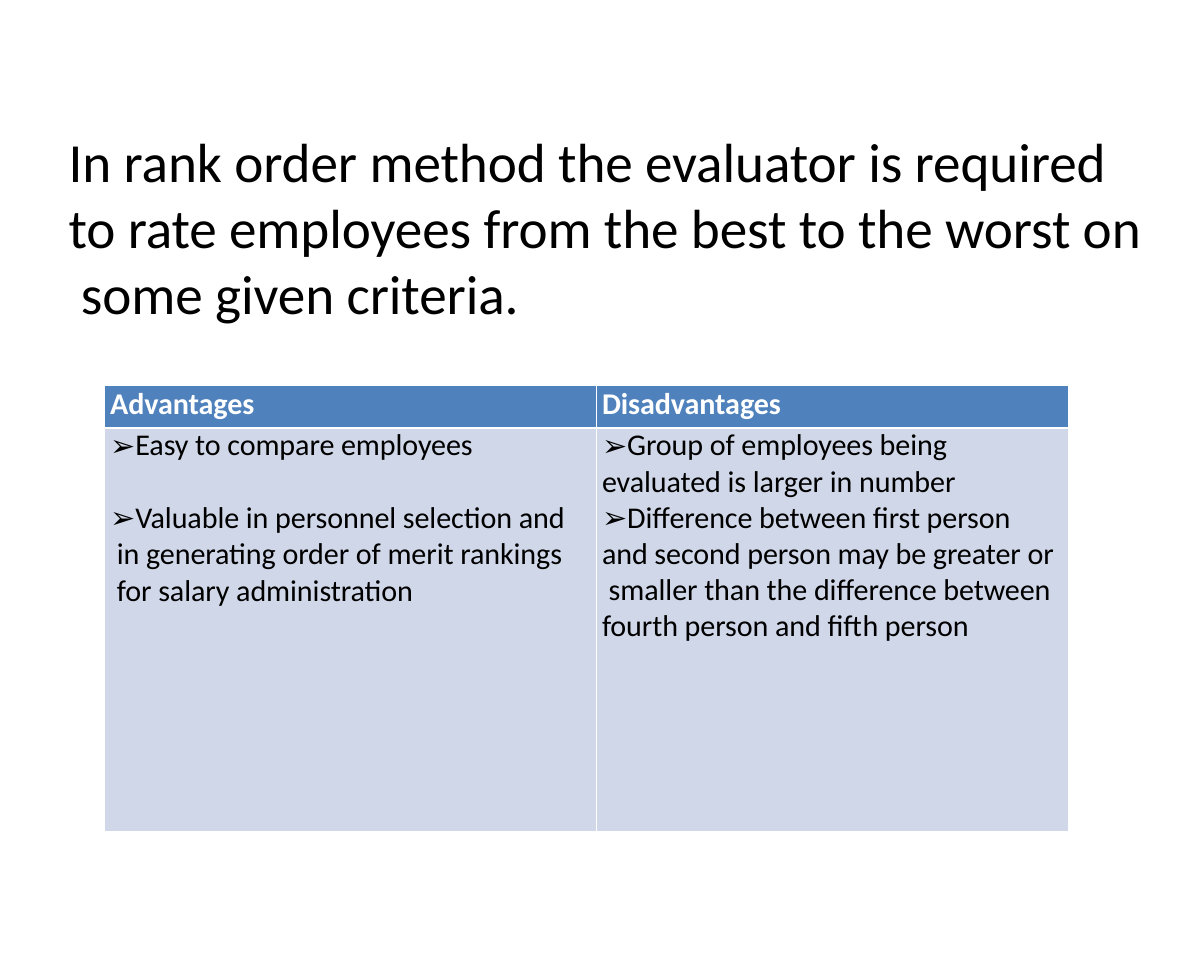
"""Build the slide on the rank order method of employee evaluation."""
from lxml import etree
from pptx import Presentation
from pptx.dml.color import RGBColor
from pptx.enum import text
from pptx.oxml import ns
from pptx.util import Inches, Pt

TITLE = (
    "In rank order method the evaluator is required"
    "\vto rate employees from the best to the worst on"
    "\v some given criteria."
)
COLUMNS = {
    "Advantages": [
        "Easy to compare employees",
        "Valuable in personnel selection and"
        "\v in generating order of merit rankings"
        "\v for salary administration",
    ],
    "Disadvantages": [
        "Group of employees being\vevaluated is larger in number",
        "Difference between first person"
        "\vand second person may be greater or"
        "\v smaller than the difference between"
        "\vfourth person and fifth person",
    ],
}
ITEM_GAPS = {"Advantages": 44, "Disadvantages": 0}


def color(value):
    """Return the colour for a hex string."""
    return RGBColor.from_string(value)


def add_element(parent, tag, **attributes):
    """Append a DrawingML element to a parent and return it."""
    return etree.SubElement(parent, ns.qn(tag), attributes)


def write_paragraph(paragraph, content, size=36, hex_color="000000", bold=False,
                    margin=0.09, line=None, before=0, bullet=None):
    """Write formatted text into a paragraph."""
    paragraph.text = content
    paragraph.alignment = text.PP_ALIGN.LEFT
    paragraph.space_before = Pt(before)
    if line:
        paragraph.line_spacing = Pt(line)
    properties = paragraph._p.get_or_add_pPr()
    properties.set("marL", str(Inches(margin)))
    properties.set("indent", "0")
    if bullet:
        add_element(properties, "a:buFont", typeface="Arial")
        add_element(properties, "a:buChar", char=bullet)
    for run in paragraph.runs:
        run.font.name = "Calibri"
        run.font.size = Pt(size)
        run.font.bold = bold
        run.font.color.rgb = color(hex_color)
        run._r.get_or_add_rPr().set("spc", "-10")


def clear_margins(holder):
    """Remove the inner margins of a cell or text frame."""
    holder.margin_left = holder.margin_right = 0
    holder.margin_top = holder.margin_bottom = 0


def style_cell(cell, fill, top, bottom):
    """Give a cell its white borders and its fill."""
    clear_margins(cell)
    properties = cell._tc.get_or_add_tcPr()
    for side, width in (("L", 1), ("R", 1), ("T", top), ("B", bottom)):
        border = add_element(properties, f"a:ln{side}", w=str(Pt(width)))
        add_element(add_element(border, "a:solidFill"), "a:srgbClr", val="FFFFFF")
    cell.fill.solid()
    cell.fill.fore_color.rgb = color(fill)


def add_title(slide):
    """Add the statement at the top."""
    box = slide.shapes.add_textbox(Inches(1.13), Inches(2.11), Inches(17.91), Inches(3.36))
    frame = box.text_frame
    frame.word_wrap = True
    clear_margins(frame)
    write_paragraph(frame.paragraphs[0], TITLE, size=66, margin=0.01)


def add_comparison(slide):
    """Add the table of advantages and disadvantages."""
    table = slide.shapes.add_table(
        2, len(COLUMNS), Inches(1.74), Inches(6.41), Inches(16), Inches(7.4)).table
    for column, width in zip(table.columns, (8.17, 7.83)):
        column.width = Inches(width)
    for row, height in zip(table.rows, (0.7, 6.7)):
        row.height = Inches(height)
    for index, (heading, items) in enumerate(COLUMNS.items()):
        header, body = table.cell(0, index), table.cell(1, index)
        style_cell(header, "4F81BC", top=1, bottom=3)
        style_cell(body, "D0D7E8", top=3, bottom=1)
        write_paragraph(header.text_frame.paragraphs[0], heading,
                        hex_color="FFFFFF", bold=True, before=0.8)
        frame = body.text_frame
        for number, item in enumerate(items):
            paragraph = frame.add_paragraph() if number else frame.paragraphs[0]
            write_paragraph(paragraph, item, line=43.2, bullet="➢",
                            before=ITEM_GAPS[heading] if number else 0)


def main():
    """Create the presentation and save it."""
    presentation = Presentation()
    presentation.slide_width, presentation.slide_height = Inches(20), Inches(16)
    slide = presentation.slides.add_slide(presentation.slide_layouts[6])
    add_title(slide)
    add_comparison(slide)
    presentation.save("out.pptx")


if __name__ == "__main__":
    main()
